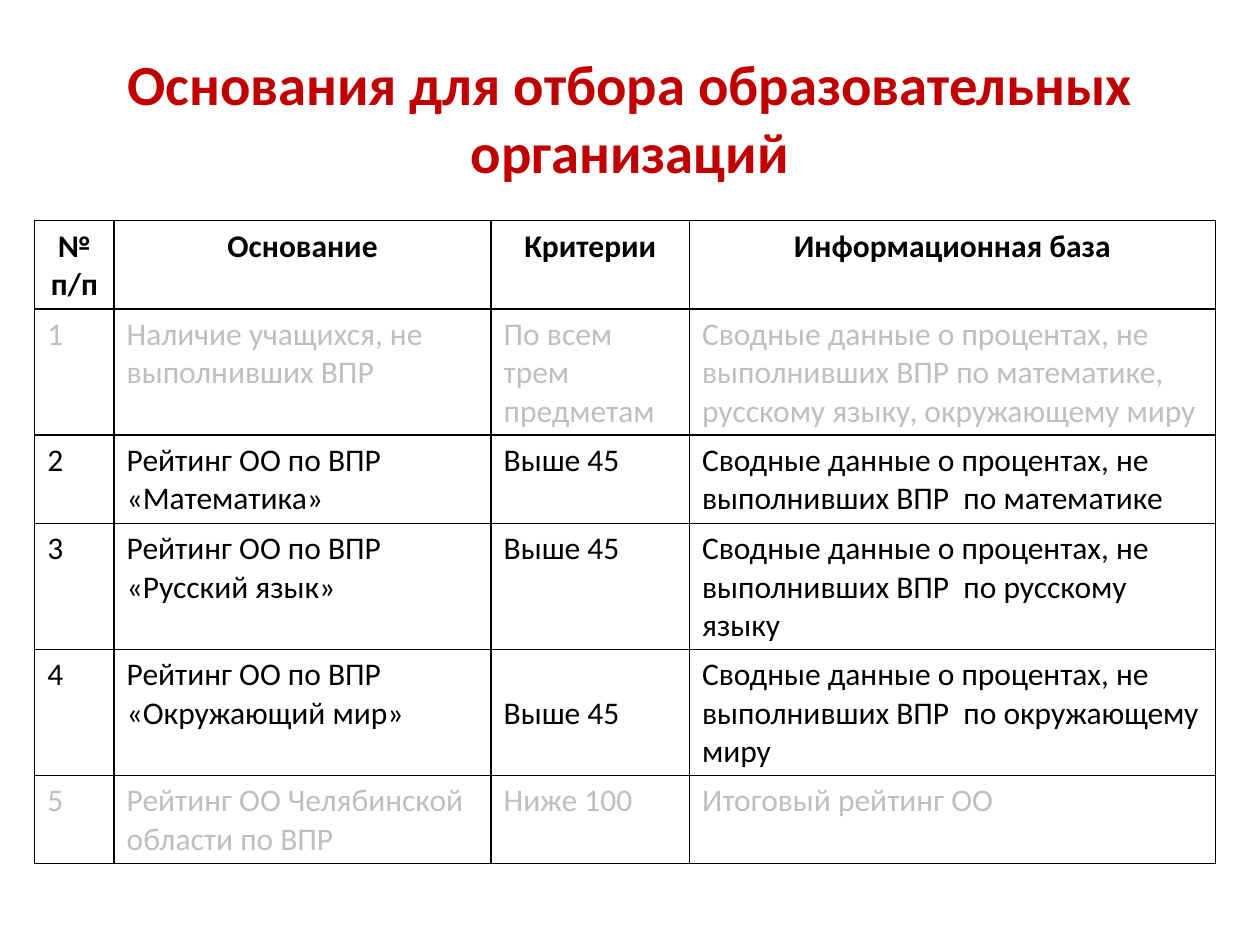
from lxml import etree
from pptx import Presentation
from pptx import util as u
from pptx.dml.color import RGBColor
from pptx.enum import text as t
from pptx.oxml.ns import qn

FONT = "Calibri"
COLORS = {"title": "C00000", "ink": "000000", "faded": "BFBFBF"}

WIDTHS = [1.6, 7.6, 4.0, 10.6]
ROW = 1.04
DATA = "Сводные данные о процентах, не выполнивших ВПР "
HEAD = ["№ п/п", "Основание", "Критерии", "Информационная база"]
ROWS = [
    ("Наличие учащихся, не выполнивших ВПР", "По всем трем предметам",
     DATA + "по математике, русскому языку, окружающему миру"),
    ("Рейтинг ОО по ВПР «Математика»", "Выше 45", DATA + " по математике"),
    ("Рейтинг ОО по ВПР «Русский язык»", "Выше 45", DATA + " по русскому языку"),
    ("Рейтинг ОО по ВПР «Окружающий мир»", "Выше 45", DATA + " по окружающему миру"),
    ("Рейтинг ОО Челябинской области по ВПР", "Ниже 100", "Итоговый рейтинг ОО"),
]
FADED = (1, 5)


def write(frame, words, size, color, bold=False, center=False):
    frame.text = words
    par = frame.paragraphs[0]
    par.alignment = t.PP_ALIGN.CENTER if center else t.PP_ALIGN.LEFT
    font = par.runs[0].font
    font.name, font.size, font.bold = FONT, u.Pt(size), bold
    font.color.rgb = RGBColor.from_string(COLORS[color])


def border(cell, color):
    props = cell._tc.get_or_add_tcPr()
    for at, side in enumerate(("a:lnL", "a:lnR", "a:lnT", "a:lnB")):
        line = etree.Element(qn(side), w=str(u.Pt(1)))
        fill = etree.SubElement(line, qn("a:solidFill"))
        etree.SubElement(fill, qn("a:srgbClr"), val=COLORS[color])
        props.insert(at, line)  # borders go before the fill


def add_title(slide, words):
    box = slide.shapes.add_textbox(u.Cm(1.27), u.Cm(0.76), u.Cm(22.86), u.Cm(3.18))
    frame = box.text_frame
    frame.word_wrap = True
    frame.vertical_anchor = t.MSO_ANCHOR.MIDDLE
    write(frame, words, 32.4, "title", bold=True, center=True)


def add_grid(slide):
    rows = [HEAD] + [(str(n), *row) for n, row in enumerate(ROWS, 1)]
    grid = slide.shapes.add_table(
        len(rows), len(WIDTHS), u.Cm(0.7), u.Cm(4.45),
        u.Cm(sum(WIDTHS)), u.Cm(ROW * len(rows))).table
    for col, width in zip(grid.columns, WIDTHS):
        col.width = u.Cm(width)
    for r, row in enumerate(rows):
        head = r == 0
        color = "faded" if r in FADED else "ink"
        for c, words in enumerate(row):
            cell = grid.cell(r, c)
            write(cell.text_frame, words, 18, color, bold=head, center=head)
            cell.fill.background()
            border(cell, "ink")
    # This criterion sits one line lower than its neighbours
    grid.cell(4, 2).margin_top = u.Cm(0.9)


def main():
    deck = Presentation()
    deck.slide_width, deck.slide_height = u.Cm(25.4), u.Cm(19.05)
    slide = deck.slides.add_slide(deck.slide_layouts[6])
    add_title(slide, "Основания для отбора образовательных организаций")
    add_grid(slide)
    deck.save("out.pptx")


if __name__ == "__main__":
    main()
